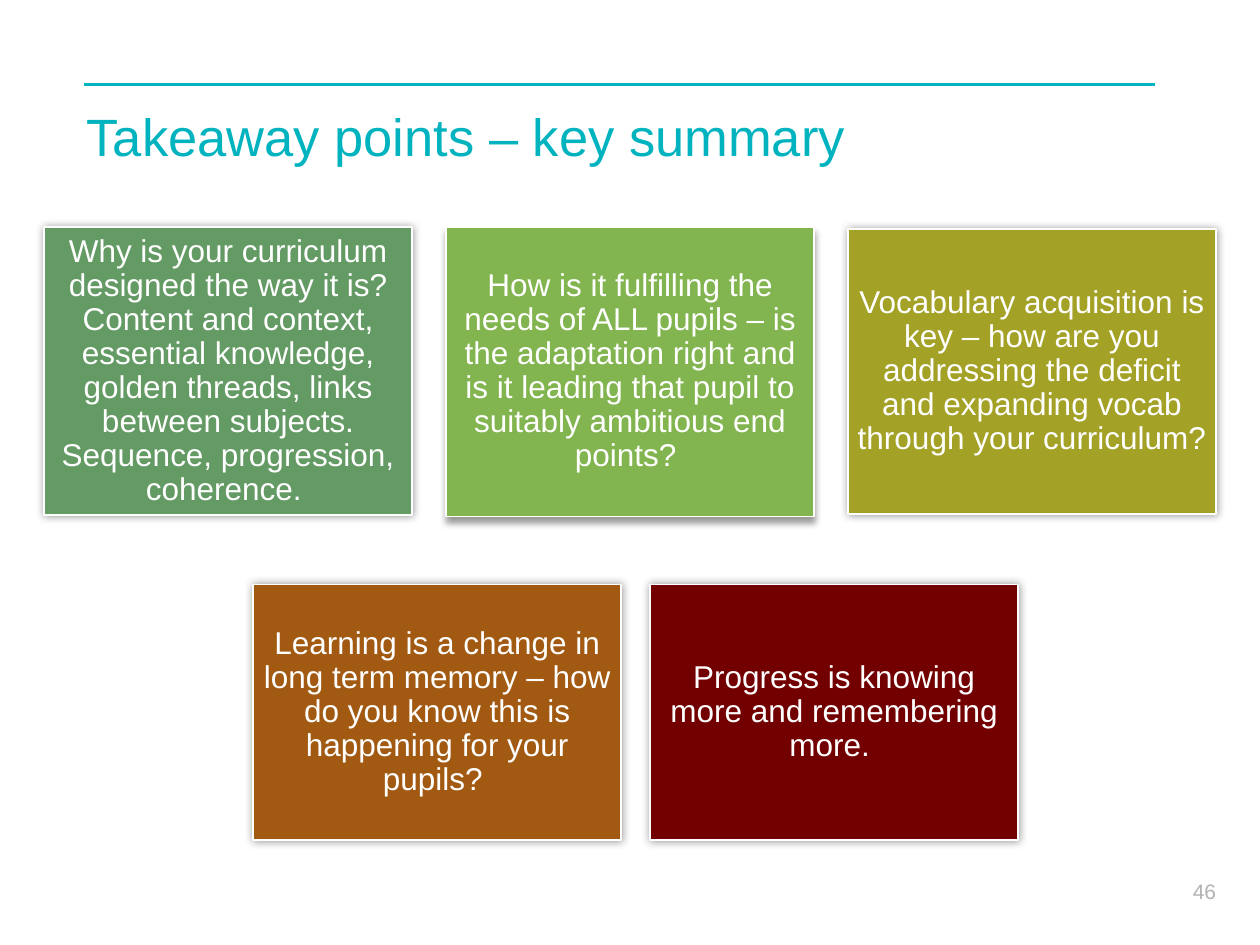
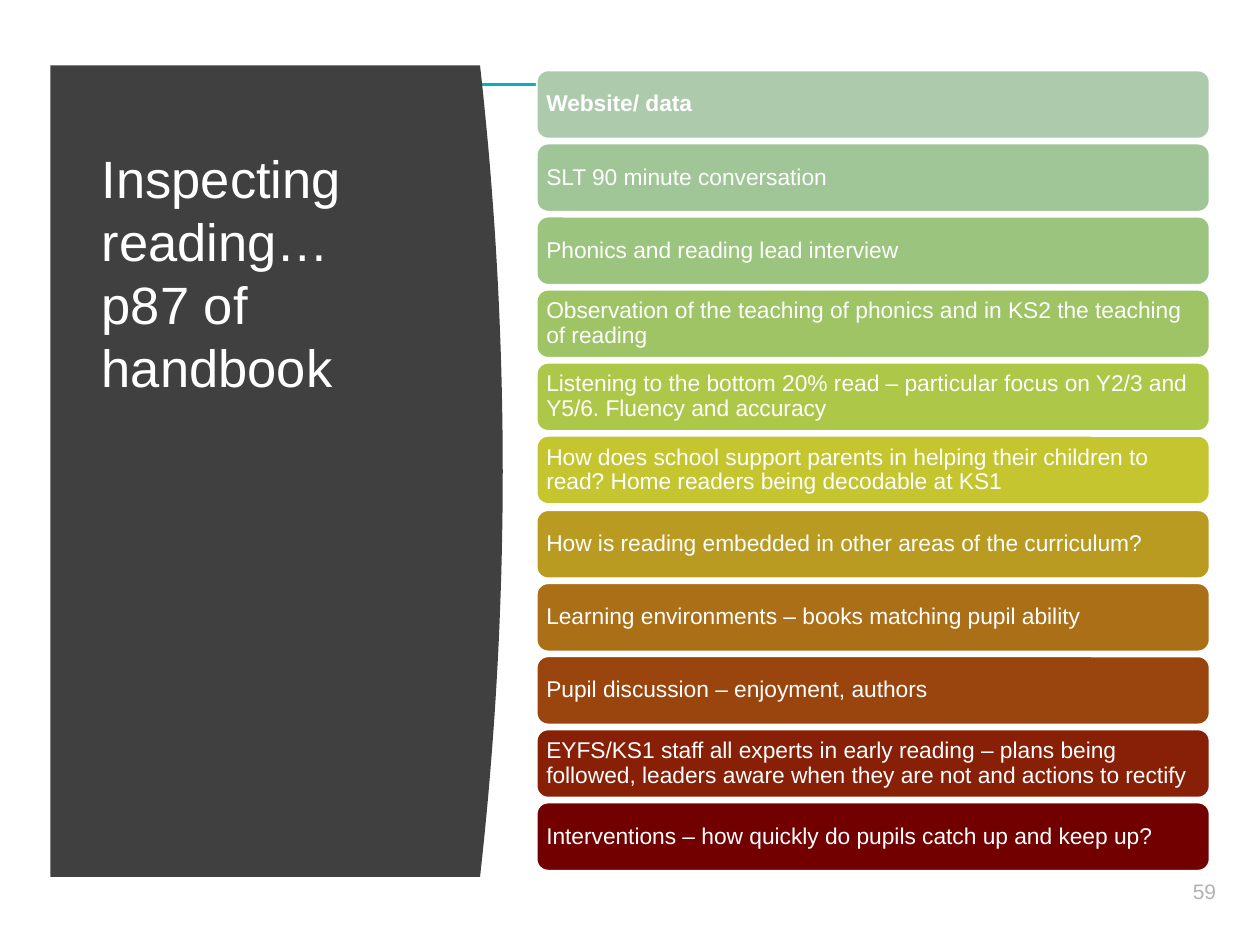
"""Builds two training slides: a takeaway summary and a reading inspection list."""
from lxml import etree
from pptx import Presentation
from pptx import util as u
from pptx.dml.color import RGBColor
from pptx.enum import shapes, text
from pptx.oxml.ns import qn

PX = 9144
FONT = "Arial"
TEAL, WHITE, CHARCOAL, GREY = "00B3BE", "FFFFFF", "404040", "B2B2B2"
GLOW = (5, 0, 0)
DROP = (4, 3, 90)

CARD_WIDTH = 292
TOP_LEFT, TOP_STEP = 35, 319
BOTTOM_LEFT, BOTTOM_STEP = 201, 315
TOP_CARDS = [
    (180, 229, "649A64", GLOW, "Why is your curriculum designed the way it is? Content and context, "
     "essential knowledge, golden threads, links between subjects. Sequence, progression, coherence. "),
    (180, 230, "82B54F", DROP, "How is it fulfilling the needs of ALL pupils – is the adaptation right "
     "and is it leading that pupil to suitably ambitious end points? "),
    (182, 226, "A4A127", GLOW, "Vocabulary acquisition is key – how are you addressing the deficit "
     "and expanding vocab through your curriculum? "),
]
BOTTOM_CARDS = [
    (464, 203, "A25A12", GLOW, "Learning is a change in long term memory – how do you know this is "
     "happening for your pupils? "),
    (464, 203, "730000", GLOW, "Progress is knowing more and remembering more. "),
]

BAR_TOP, BAR_STEP = 56, 58.1
INSPECTION_STEPS = [
    ("ADCAAD", "Website/ data"),
    ("A0C697", "SLT 90 minute conversation"),
    ("9BC47F", "Phonics and reading lead interview"),
    ("9EC465", "Observation of the teaching of phonics and in KS2 the teaching of reading"),
    ("ADC748", "Listening to the bottom 20% read – particular focus on Y2/3 and Y5/6. "
     "Fluency and accuracy"),
    ("C5C530", "How does school support parents in helping their children to read? "
     "Home readers being decodable at KS1"),
    ("B99B22", "How is reading embedded in other areas of the curriculum?"),
    ("AA6F17", "Learning environments – books matching pupil ability"),
    ("9A450D", "Pupil discussion – enjoyment, authors"),
    ("872006", "EYFS/KS1 staff all experts in early reading – plans being followed, "
     "leaders aware when they are not and actions to rectify"),
    ("730000", "Interventions – how quickly do pupils catch up and keep up?"),
]


def px(*lengths):
    """Turn px lengths into EMU."""
    return [u.Emu(round(length * PX)) for length in lengths]


def color(value):
    """Turn a hex string into a colour."""
    return RGBColor.from_string(value)


def write(shape, words, size, ink, align=text.PP_ALIGN.LEFT, spacing=None, bold=False):
    """Put one formatted paragraph into a shape."""
    frame = shape.text_frame
    frame.word_wrap = True
    frame.text = words
    para = frame.paragraphs[0]
    para.alignment = align
    para.line_spacing = spacing
    for span in para.runs:
        span.font.name = FONT
        span.font.size = u.Pt(size)
        span.font.bold = bold
        span.font.color.rgb = color(ink)


def add_text(page, at, words, size, ink, **style):
    """Add a text box anchored at the top."""
    box = page.shapes.add_textbox(*px(*at))
    write(box, words, size, ink, **style)


def add_title(page, at, words, ink):
    """Add a slide title."""
    add_text(page, at, words, 30, ink, spacing=u.Pt(36))


def add_panel(page, kind, at, fill, words, size, inset, **style):
    """Add a filled, white-edged shape with vertically centred text."""
    panel = page.shapes.add_shape(kind, *px(*at))
    panel.shadow.inherit = False
    panel.fill.solid()
    panel.fill.fore_color.rgb = color(fill)
    panel.line.color.rgb = color(WHITE)
    panel.line.width = u.Pt(1)
    frame = panel.text_frame
    frame.vertical_anchor = text.MSO_ANCHOR.MIDDLE
    frame.margin_left, frame.margin_top, frame.margin_right, frame.margin_bottom = px(*[inset] * 4)
    write(panel, words, size, WHITE, spacing=0.9, **style)
    return panel


def add_shadow(shape, blur, distance, angle):
    """Give a shape a soft black shadow."""
    effects = shape._element.spPr.find(qn("a:effectLst"))
    shadow = etree.SubElement(effects, qn("a:outerShdw"), blurRad=str(u.Pt(blur)),
                              dist=str(u.Pt(distance)), dir=str(angle * 60000),
                              algn="ctr", rotWithShape="0")
    black = etree.SubElement(shadow, qn("a:srgbClr"), val="000000")
    etree.SubElement(black, qn("a:alpha"), val="40000")


def add_cards(page, left, step, cards):
    """Add one row of summary cards."""
    for index, (top, height, fill, shadow, words) in enumerate(cards):
        card = add_panel(page, shapes.MSO_SHAPE.RECTANGLE,
                         (left + index * step, top, CARD_WIDTH, height),
                         fill, words, 18, 7, align=text.PP_ALIGN.CENTER)
        add_shadow(card, *shadow)


def add_bars(page):
    """Stack the inspection steps as rounded bars."""
    for index, (fill, words) in enumerate(INSPECTION_STEPS):
        add_panel(page, shapes.MSO_SHAPE.ROUNDED_RECTANGLE,
                  (426, round(BAR_TOP + index * BAR_STEP), 534, 54),
                  fill, words, 13, 5, bold=index == 0)


def add_curved_panel(page, left, top, edge, bottom, bulge, steps=40):
    """Add a dark panel whose right edge bulges as a parabola."""
    points = []
    for step in range(steps + 1):
        part = step / steps
        points.append((edge + 4 * bulge * part * (1 - part), top + (bottom - top) * part))
    builder = page.shapes.build_freeform(*px(left, top), scale=1.0)
    builder.add_line_segments([px(*point) for point in points + [(left, bottom)]], close=True)
    panel = builder.convert_to_shape()
    panel.shadow.inherit = False
    panel.fill.solid()
    panel.fill.fore_color.rgb = color(CHARCOAL)
    panel.line.fill.background()


def add_page(deck, number):
    """Add a blank slide with the teal rule and the page number."""
    page = deck.slides.add_slide(deck.slide_layouts[6])
    rule = page.shapes.add_connector(shapes.MSO_CONNECTOR.STRAIGHT, *px(67, 67, 917, 67))
    rule.line.color.rgb = color(TEAL)
    rule.line.width = u.Pt(1.5)
    etree.SubElement(rule._element.spPr, qn("a:effectLst"))
    add_text(page, (783, 692, 192, 30), str(number), 12, GREY, align=text.PP_ALIGN.RIGHT)
    return page


def main():
    """Build and save the deck."""
    deck = Presentation()
    deck.slide_width, deck.slide_height = px(1000, 750)

    summary = add_page(deck, 46)
    add_title(summary, (59, 78, 646, 72), "Takeaway points – key summary", TEAL)
    add_cards(summary, TOP_LEFT, TOP_STEP, TOP_CARDS)
    add_cards(summary, BOTTOM_LEFT, BOTTOM_STEP, BOTTOM_CARDS)

    reading = add_page(deck, 59)
    add_curved_panel(reading, 40, 52, 381, 696, 18)
    add_title(reading, (71, 111, 280, 524), "Inspecting reading… p87 of handbook", WHITE)
    add_bars(reading)

    deck.save("out.pptx")


if __name__ == "__main__":
    main()
